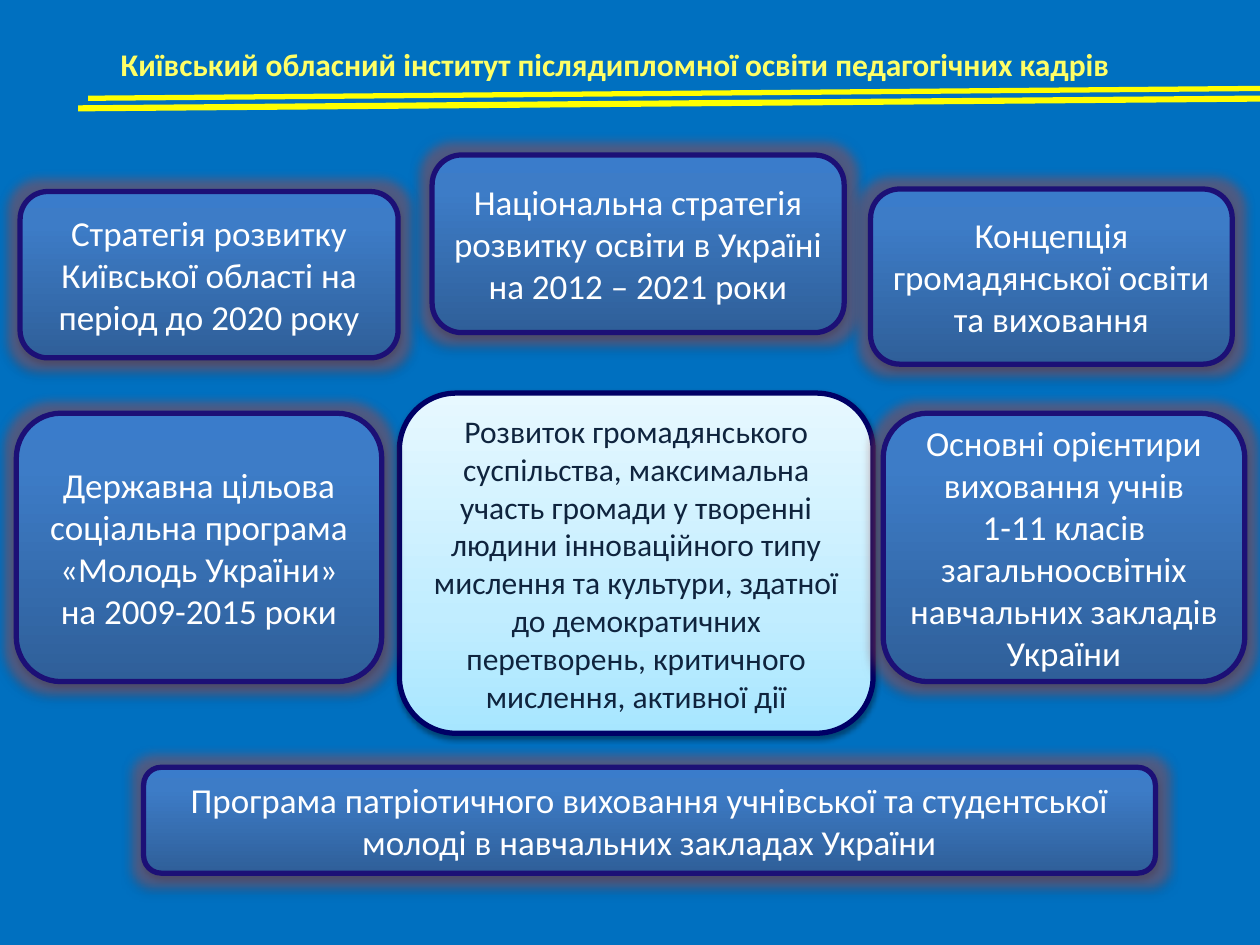
from dataclasses import dataclass

from lxml import etree
from pptx import Presentation
from pptx.dml.color import RGBColor
from pptx.enum.shapes import MSO_CONNECTOR, MSO_SHAPE
from pptx.enum.text import MSO_ANCHOR, MSO_AUTO_SIZE, PP_ALIGN
from pptx.oxml.ns import qn
from pptx.util import Inches, Pt

ROUND = MSO_SHAPE.ROUNDED_RECTANGLE
STRAIGHT = MSO_CONNECTOR.STRAIGHT
MIDDLE = MSO_ANCHOR.MIDDLE
GROW = MSO_AUTO_SIZE.SHAPE_TO_FIT_TEXT
CENTER, LEFT = PP_ALIGN.CENTER, PP_ALIGN.LEFT

# The slide is a grid of 100 columns by 75 rows.
COLS, ROWS = 100, 75
WIDE, HIGH = Inches(10), Inches(7.5)

BACK = RGBColor(0x00, 0x70, 0xC0)
WHITE = RGBColor(0xFF, 0xFF, 0xFF)
INK = RGBColor(0x0F, 0x24, 0x3E)
YELLOW = RGBColor(0xFF, 0xFF, 0x00)
LEMON = RGBColor(0xFF, 0xFF, 0x66)
NAVY = RGBColor(0x00, 0x00, 0x66)
INDIGO = RGBColor(0x1C, 0x10, 0x76)
BLACK = RGBColor(0x00, 0x00, 0x00)
RED = RGBColor(0xC0, 0x50, 0x4D)


@dataclass(frozen=True)
class Style:
    stops: tuple
    edge: RGBColor
    ink: RGBColor
    size: int
    shade: int
    drop: float
    glow: float = 0


@dataclass(frozen=True)
class Card:
    col: float
    row: float
    cols: float
    rows: float
    lines: tuple
    style: Style


GOAL = Style(
    ((0, RGBColor(0xA7, 0xE6, 0xFF)), (35, RGBColor(0xC1, 0xED, 0xFF)),
     (100, RGBColor(0xE7, 0xF8, 0xFF))),
    NAVY, INK, 18, 38, 1.6)
BASIS = Style(
    ((0, RGBColor(0x2F, 0x5F, 0x99)), (80, RGBColor(0x3D, 0x7C, 0xC7)),
     (100, RGBColor(0x3A, 0x7C, 0xCB))),
    INDIGO, WHITE, 20, 35, 1.8, glow=11)

CARDS = (
    Card(31.7, 31.2, 37.6, 27,
         ("Розвиток громадянського суспільства, максимальна участь громади "
          "у творенні людини інноваційного типу мислення та культури, здатної "
          "до демократичних перетворень, критичного мислення, активної дії",),
         GOAL),
    Card(34.3, 12.3, 32.7, 14.1,
         ("Національна стратегія розвитку освіти в Україні на 2012 – 2021 роки",),
         BASIS),
    Card(1.6, 15.2, 30, 13.2,
         ("Стратегія розвитку Київської області на період до 2020 року",), BASIS),
    Card(1.3, 32.8, 29, 21.3,
         ("Державна цільова соціальна програма «Молодь України» "
          "на 2009-2015 роки",), BASIS),
    Card(11.4, 60.9, 80.3, 8.4,
         ("Програма патріотичного виховання учнівської та студентської молоді "
          "в навчальних закладах України",), BASIS),
    Card(70.1, 32.8, 28.7, 21.3,
         ("Основні орієнтири виховання учнів",
          "1-11 класів загальноосвітніх навчальних закладів України"), BASIS),
    Card(69.1, 15, 28.7, 13.9,
         ("Концепція громадянської освіти та виховання",), BASIS),
)
RULES = ((7, 7.8, 102.3, 7, 3), (6.2, 8.6, 103.1, 7.8, 3.5))


def across(cols: float) -> int:
    return round(WIDE * cols / COLS)


def down(rows: float) -> int:
    return round(HIGH * rows / ROWS)


def add_node(parent, tag: str, **attrs):
    return etree.SubElement(parent, qn(tag), {k: str(v) for k, v in attrs.items()})


def add_color(parent, color: RGBColor, alpha: int = 100) -> None:
    node = add_node(parent, "a:srgbClr", val=color)
    if alpha < 100:
        add_node(node, "a:alpha", val=alpha * 1000)


def write(frame, lines: tuple, *, size: int, color: RGBColor,
          bold: bool = False, align=LEFT) -> None:
    for i, line in enumerate(lines):
        para = frame.add_paragraph() if i else frame.paragraphs[0]
        para.alignment = align
        run = para.add_run()
        run.text = line
        font = run.font
        font.name, font.size, font.bold = "Calibri", Pt(size), bold
        font.color.rgb = color


def shade(shape, style: Style) -> None:
    """Fill from the bottom up, then add the glow and the drop shadow."""
    shape.fill.gradient()
    shape.fill.gradient_angle = 90
    props = shape.element.spPr
    stops = props.find(".//" + qn("a:gsLst"))
    for old in list(stops):
        stops.remove(old)
    for pos, color in style.stops:
        add_color(add_node(stops, "a:gs", pos=pos * 1000), color)
    shape.shadow.inherit = False
    effects = props.find(qn("a:effectLst"))
    if style.glow:
        add_color(add_node(effects, "a:glow", rad=Pt(style.glow)), RED, 40)
    drop = add_node(effects, "a:outerShdw", blurRad=Pt(3.1), dist=Pt(style.drop),
                    dir=90 * 60000, rotWithShape=0)
    add_color(drop, BLACK, style.shade)


def add_card(slide, card: Card) -> None:
    style = card.style
    shape = slide.shapes.add_shape(ROUND, across(card.col), down(card.row),
                                   across(card.cols), down(card.rows))
    shape.line.color.rgb = style.edge
    shape.line.width = Pt(3)
    shade(shape, style)
    frame = shape.text_frame
    frame.word_wrap = True
    frame.vertical_anchor = MIDDLE
    write(frame, card.lines, size=style.size, color=style.ink, align=CENTER)


def add_rule(slide, col: float, row: float, end: float, stop: float,
             width: float) -> None:
    rule = slide.shapes.add_connector(STRAIGHT, across(col), down(row),
                                      across(end), down(stop))
    rule.line.color.rgb = YELLOW
    rule.line.width = Pt(width)
    add_node(rule.element.spPr, "a:effectLst")


def add_head(slide) -> None:
    box = slide.shapes.add_textbox(across(8.6), down(3.1), across(81.2), down(4))
    frame = box.text_frame
    frame.word_wrap = False
    frame.auto_size = GROW
    write(frame, ("Київський обласний інститут післядипломної освіти "
                  "педагогічних кадрів",), size=18, color=LEMON, bold=True)


def main() -> None:
    deck = Presentation()
    deck.slide_width, deck.slide_height = WIDE, HIGH
    slide = deck.slides.add_slide(deck.slide_layouts[6])
    slide.background.fill.solid()
    slide.background.fill.fore_color.rgb = BACK
    for card in CARDS:
        add_card(slide, card)
    for rule in RULES:
        add_rule(slide, *rule)
    add_head(slide)
    deck.save("out.pptx")


if __name__ == "__main__":
    main()
